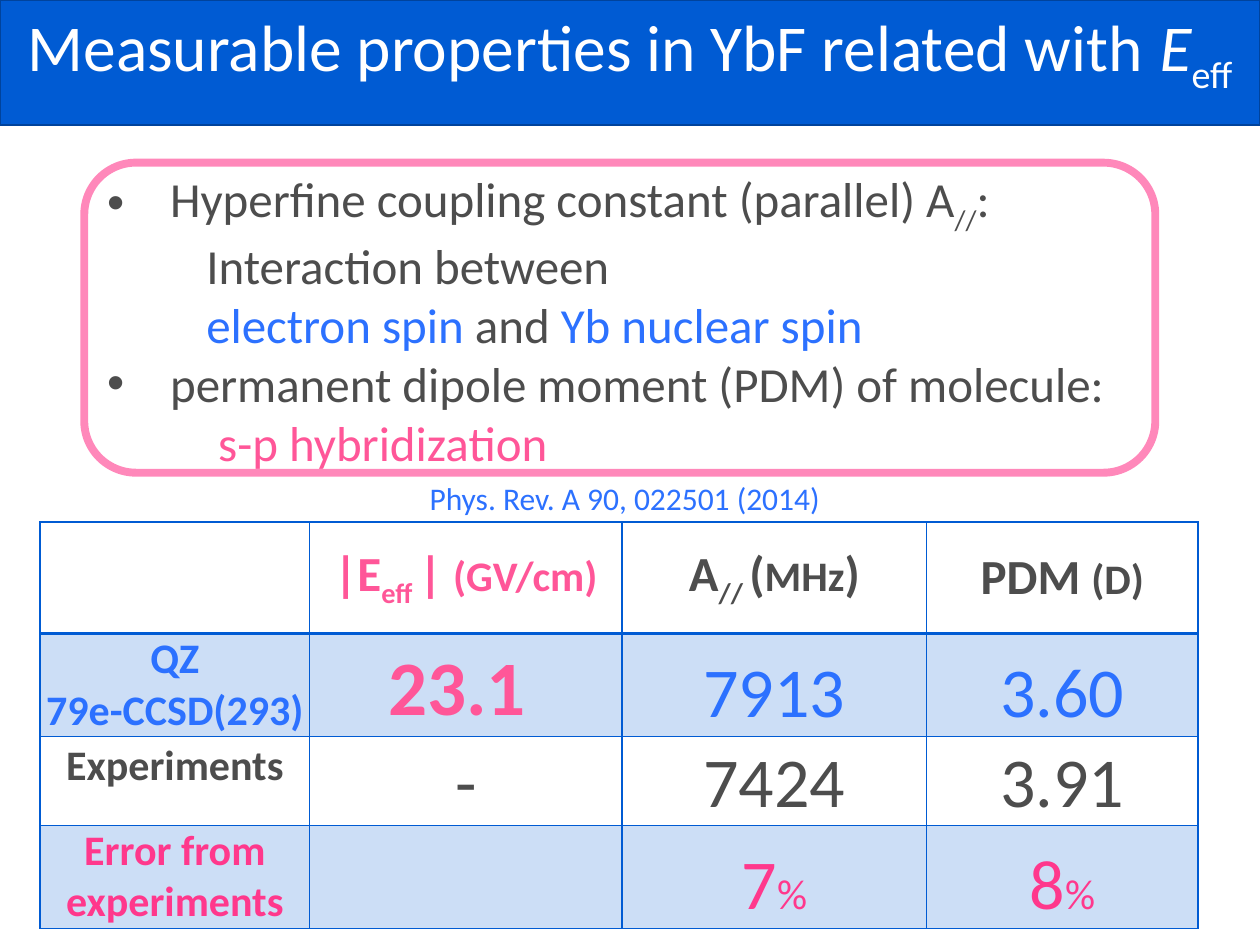
from lxml import etree
from pptx import Presentation
from pptx.dml.color import RGBColor
from pptx.enum import shapes, text
from pptx.oxml.ns import qn
from pptx.util import Cm, Pt

BLUE, AZURE, PINK, ROSE, GREY = "005BD3", "2C71FF", "FF5698", "FF388C", "4D4D4D"
SUB = {"sub": True}


def colour(value):
    return RGBColor.from_string(value)


def write(paragraph, runs, **base):
    """Add (words, format) runs; each format overrides the base values."""
    for words, own in runs:
        look = {"name": "Calibri", "bold": False, **base, **own}
        run = paragraph.add_run()
        run.text = words
        run.font.color.rgb = colour(look.pop("color"))
        run.font.size = Pt(look.pop("size"))
        if look.pop("sub", False):
            run._r.get_or_add_rPr().set("baseline", "-25000")
        for key, value in look.items():
            setattr(run.font, key, value)


deck = Presentation()
deck.slide_width, deck.slide_height = Cm(25.4), Cm(19.05)
slide = deck.slides.add_slide(deck.slide_layouts[5])

# Title band
title = slide.shapes.title
title.left, title.top, title.width, title.height = Cm(0), Cm(0), Cm(25.4), Cm(2.52)
title.fill.solid()
title.fill.fore_color.rgb = colour(BLUE)
title.line.color.rgb = colour("00439C")
title.line.width = Pt(1.25)
title.text_frame.auto_size = text.MSO_AUTO_SIZE.NONE
title.text_frame.vertical_anchor = text.MSO_ANCHOR.TOP
heading = title.text_frame.paragraphs[0]
heading.alignment = text.PP_ALIGN.CENTER
write(heading, [("Measurable properties in YbF related with ", {}),
                ("E", {"italic": True}), ("eff", SUB)], size=37.4, color="FFFFFF")

# Results table: columns are |Eeff|, A// and PDM
header = [
    [],
    [("|E", {}), ("eff ", SUB), ("| ", {}), ("(GV/cm)", {"size": 24})],
    [("A", {}), ("// ", SUB), ("(", {}), ("MHz", {"size": 24}), (")", {})],
    [("PDM ", {}), ("(D)", {"size": 24})],
]
percent = ("%", {"size": 24})
values = [
    [[("23.1 ", {"size": 44, "color": PINK, "bold": True})], [("7913", {})], [("3.60", {})]],
    [[("-", {})], [("7424", {})], [("3.91", {})]],
    [[], [("7", {}), percent], [("8", {}), percent]],
]
labels = [["QZ", "79e-CCSD(293)"], ["Experiments"], ["Error from experiments"]]
row_colours = [AZURE, GREY, ROSE]

results = slide.shapes.add_table(4, 4, Cm(0.81), Cm(10.52), Cm(23.34), Cm(7.7)).table
results.first_row = results.horz_banding = False
for column, width in zip(results.columns, (5.43, 6.3, 6.14, 5.47)):
    column.width = Cm(width)
for row, height in zip(results.rows, (2.26, 1.98, 1.8, 1.65)):
    row.height = Cm(height)

for r in range(4):
    for c in range(4):
        cell = results.cell(r, c)
        side = Cm(0.03) if c < 2 else Cm(0.18)
        is_value = r > 0 and c > 0
        anchor = text.MSO_ANCHOR.BOTTOM if is_value else text.MSO_ANCHOR.MIDDLE
        layout = {"margin_left": side, "margin_right": side, "margin_top": 0,
                  "margin_bottom": 0, "vertical_anchor": anchor}
        for key, value in layout.items():
            setattr(cell, key, value)

        # Wording
        if r == 0:
            lines = [header[c]]
            base = {"size": 28, "color": PINK if c == 1 else GREY, "bold": True}
        elif c == 0:
            lines = [[(label, {})] for label in labels[r - 1]]
            base = {"size": 24, "color": row_colours[r - 1], "bold": True}
        else:
            lines = [values[r - 1][c - 1]]
            base = {"size": 40, "color": row_colours[r - 1]}
        for i, runs in enumerate(lines):
            line = cell.text_frame.paragraphs[0] if i == 0 else cell.text_frame.add_paragraph()
            line.alignment = text.PP_ALIGN.CENTER
            if runs and (is_value or (r, c) == (2, 0)):
                line.line_spacing = Pt(12)
            write(line, runs, **base)

        # Borders, with a heavier rule under the header
        properties = cell._tc.get_or_add_tcPr()
        for edge in ("L", "R", "T", "B"):
            heavy = (r, edge) in ((0, "B"), (1, "T"))
            border = etree.SubElement(properties, qn("a:ln" + edge), w=str(Pt(2 if heavy else 1)))
            paint = etree.SubElement(border, qn("a:solidFill"))
            etree.SubElement(paint, qn("a:srgbClr"), val=BLUE)

        # Tint on every second row
        if r % 2:
            cell.fill.solid()
            cell.fill.fore_color.rgb = colour(BLUE)
            tint = properties.find(qn("a:solidFill"))[0]
            etree.SubElement(tint, qn("a:alpha"), val="20000")
        else:
            cell.fill.background()

# Property list: (indent in cm, bulleted, runs)
points = [
    (1.27, True, [("Hyperfine coupling constant (parallel) A", {}), ("//", SUB), (":", {})]),
    (2, False, [("Interaction between", {})]),
    (2, False, [("electron spin ", {"color": AZURE}), ("and ", {}),
                ("Yb nuclear spin", {"color": AZURE})]),
    (1.27, True, [("permanent dipole moment (PDM) of molecule:", {})]),
    (2.24, False, [("s-p hybridization", {"color": PINK})]),
]
properties_text = slide.shapes.add_textbox(Cm(1.91), Cm(3.28), Cm(21.06), Cm(6.25)).text_frame
properties_text.word_wrap = False
for i, (indent, bulleted, runs) in enumerate(points):
    point = properties_text.paragraphs[0] if i == 0 else properties_text.add_paragraph()
    point.alignment = text.PP_ALIGN.LEFT
    settings = point._p.get_or_add_pPr()
    settings.set("marL", str(Cm(indent)))
    settings.set("indent", str(Cm(-1.27 if bulleted else 0)))
    if bulleted:
        etree.SubElement(settings, qn("a:buFont"), typeface="Arial")
        etree.SubElement(settings, qn("a:buChar"), char="•")
    write(point, runs, size=28, color=GREY)

# Rounded frame around the list
frame = slide.shapes.add_shape(shapes.MSO_SHAPE.ROUNDED_RECTANGLE,
                               Cm(1.7), Cm(3.28), Cm(21.59), Cm(6.25))
frame.shadow.inherit = False
frame.fill.background()
frame.line.color.rgb = colour("FF88BA")
frame.line.width = Pt(4.5)

# Citation
citation = slide.shapes.add_textbox(Cm(8.41), Cm(9.53), Cm(8.61), Cm(1.02)).text_frame
citation.word_wrap = False
write(citation.paragraphs[0], [("Phys. Rev. A 90, 022501 (2014)", {})], size=18, color=AZURE)

deck.save("out.pptx")
